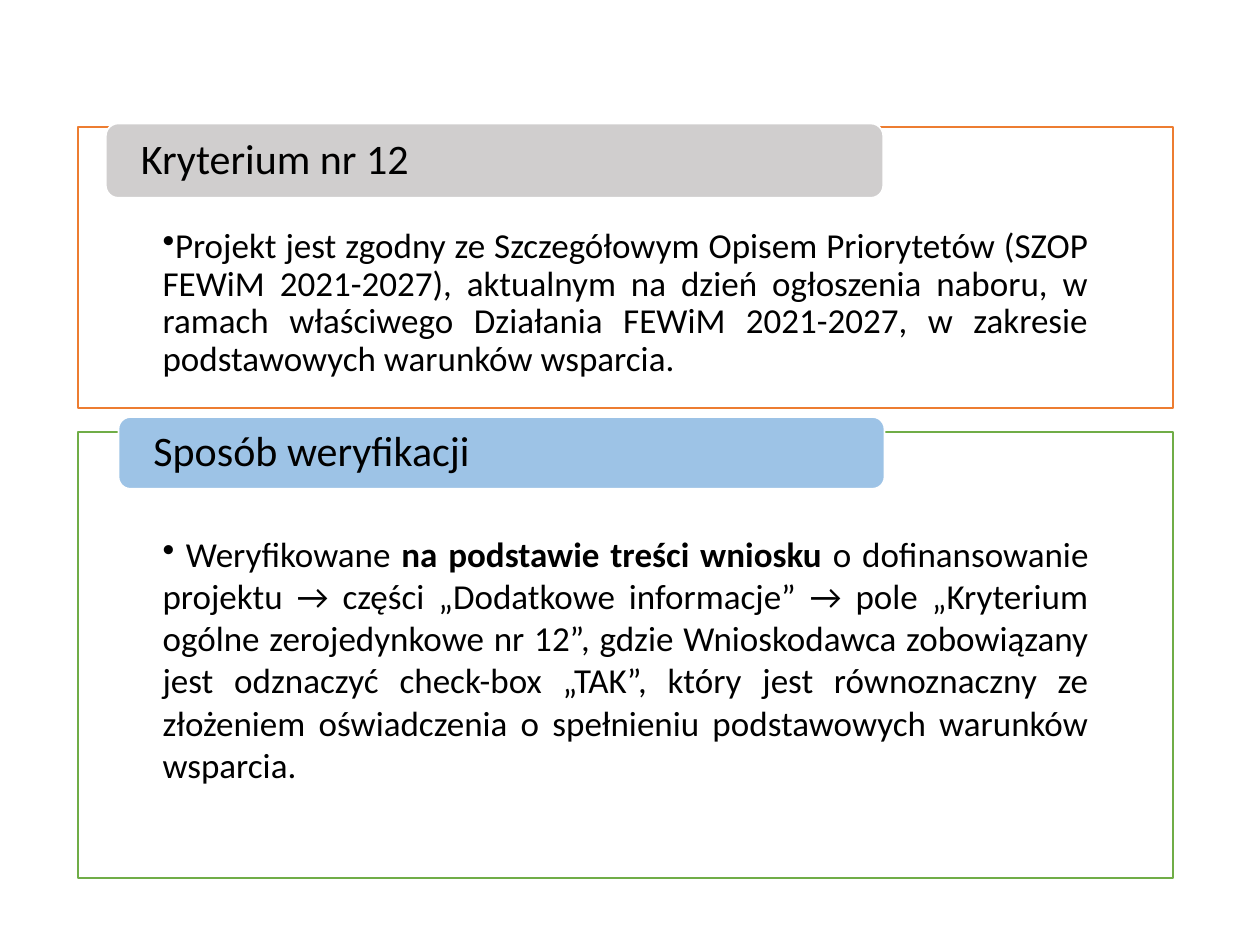
from dataclasses import dataclass

from lxml.etree import SubElement
from pptx import Presentation
from pptx.dml.color import RGBColor
from pptx.enum.shapes import MSO_SHAPE as Shape
from pptx.enum.text import MSO_ANCHOR as Anchor, PP_ALIGN as Align
from pptx.oxml.ns import qn
from pptx.util import Inches, Pt


@dataclass(frozen=True)
class Theme:
    font: str = "Calibri"
    text: str = "000000"
    paper: str = "FFFFFF"
    orange: str = "ED7D31"
    green: str = "70AD47"
    grey: str = "D0CECE"
    blue: str = "9DC3E6"
    heading_size: int = 24
    body_size: int = 20
    outline: int = 1


THEME = Theme()


def write_text(frame, runs, size, align=Align.LEFT, anchor=Anchor.TOP,
               insets=(0, 0, 0, 0), line_spacing=1.0, bullet=False):
    """Fill a frame with one paragraph made of (text, bold) runs."""
    frame.word_wrap = True
    frame.vertical_anchor = anchor
    (frame.margin_left, frame.margin_top,
     frame.margin_right, frame.margin_bottom) = map(Inches, insets)
    paragraph = frame.paragraphs[0]
    paragraph.alignment = align
    paragraph.line_spacing = line_spacing
    if bullet:
        properties = paragraph._p.get_or_add_pPr()
        properties.set("marL", "0")
        properties.set("indent", "0")
        SubElement(properties, qn("a:buChar"), char="•")
    for text, bold in runs:
        run = paragraph.add_run()
        run.text = text
        run.font.name = THEME.font
        run.font.size = Pt(size)
        run.font.bold = bold
        run.font.color.rgb = RGBColor.from_string(THEME.text)


class SlideBuilder:
    def __init__(self, slide, theme):
        self.slide = slide
        self.theme = theme

    def panel(self, preset, box, fill, line):
        panel = self.slide.shapes.add_shape(preset, *map(Inches, box))
        panel.shadow.inherit = False
        panel.fill.solid()
        panel.fill.fore_color.rgb = RGBColor.from_string(fill)
        panel.line.color.rgb = RGBColor.from_string(line)
        panel.line.width = Pt(self.theme.outline)
        return panel

    def card(self, box, line, runs, line_spacing):
        card = self.panel(Shape.RECTANGLE, box, self.theme.paper, line)
        write_text(card.text_frame, runs, self.theme.body_size,
                   align=Align.JUSTIFY, insets=(0.67, 0.8, 0.67, 0.16),
                   line_spacing=line_spacing, bullet=True)

    def heading(self, preset, box, fill, text):
        heading = self.panel(preset, box, fill, self.theme.paper)
        write_text(heading.text_frame, [(text, False)], self.theme.heading_size,
                   anchor=Anchor.MIDDLE, insets=(0.25, 0, 0.25, 0),
                   line_spacing=0.9)


def main():
    presentation = Presentation()
    presentation.slide_width = Inches(10)
    presentation.slide_height = Inches(7.5)
    blank_layout = presentation.slide_layouts[6]
    builder = SlideBuilder(presentation.slides.add_slide(blank_layout), THEME)

    criterion = [(
        "Projekt jest zgodny ze Szczegółowym Opisem Priorytetów (SZOP FEWiM "
        "2021-2027), aktualnym na dzień ogłoszenia naboru, w ramach właściwego "
        "Działania FEWiM 2021-2027, w zakresie podstawowych warunków wsparcia.",
        False)]
    verification = [
        (" ", True),
        ("Weryfikowane ", False),
        ("na podstawie treści wniosku ", True),
        ("o dofinansowanie projektu → części „Dodatkowe informacje” → pole "
         "„Kryterium ogólne zerojedynkowe nr 12”, gdzie Wnioskodawca "
         "zobowiązany jest odznaczyć check-box „TAK”, który jest równoznaczny "
         "ze złożeniem oświadczenia o spełnieniu podstawowych warunków "
         "wsparcia.", False),
    ]

    builder.card((0.62, 1.01, 8.69, 2.23), THEME.orange, criterion, 0.9)
    builder.heading(Shape.ROUNDED_RECTANGLE, (0.84, 0.98, 6.17, 0.59),
                    THEME.grey, "Kryterium nr 12")
    builder.card((0.62, 3.43, 8.69, 3.54), THEME.green, verification, 1.0)
    builder.heading(Shape.FLOWCHART_ALTERNATE_PROCESS, (0.94, 3.31, 6.08, 0.57),
                    THEME.blue, "Sposób weryfikacji")

    presentation.save("out.pptx")


if __name__ == "__main__":
    main()
